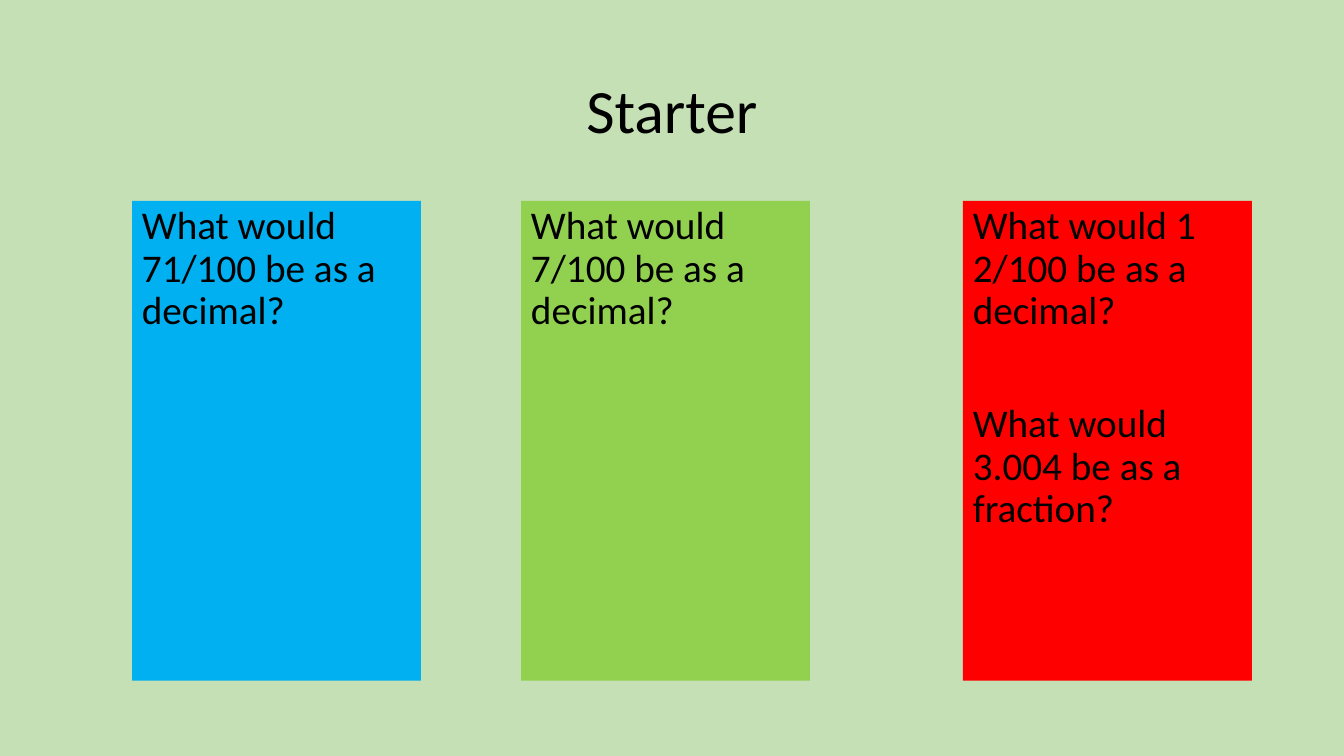
from dataclasses import dataclass

from pptx import Presentation
from pptx.dml.color import RGBColor
from pptx.enum.shapes import MSO_SHAPE
from pptx.enum.text import MSO_ANCHOR, PP_ALIGN
from pptx.util import Pt


@dataclass(frozen=True)
class Theme:
    font: str = "Calibri"
    title_size: float = 44
    body_size: float = 28
    line_spacing: float = 0.9
    text: str = "000000"
    background: str = "C5E0B4"
    blue: str = "00B0F0"
    green: str = "92D050"
    red: str = "FF0000"


def write_text(paragraph, text, *, font, size, color, line_spacing,
               align=PP_ALIGN.LEFT, space_before=0):
    paragraph.alignment = align
    paragraph.line_spacing = line_spacing
    paragraph.space_before = Pt(space_before)
    run = paragraph.add_run()
    run.text = text
    run.font.name = font
    run.font.size = Pt(size)
    run.font.color.rgb = RGBColor.from_string(color)


class SlideBuilder:
    def __init__(self, slide, theme):
        self.slide = slide
        self.theme = theme
        self.text_style = dict(font=theme.font, color=theme.text,
                               line_spacing=theme.line_spacing)

    def background(self):
        fill = self.slide.background.fill
        fill.solid()
        fill.fore_color.rgb = RGBColor.from_string(self.theme.background)

    def title(self, text, left, top, width, height):
        shape = self.slide.shapes.title
        shape.left, shape.top = Pt(left), Pt(top)
        shape.width, shape.height = Pt(width), Pt(height)
        shape.text_frame.vertical_anchor = MSO_ANCHOR.MIDDLE
        write_text(shape.text_frame.paragraphs[0], text, size=self.theme.title_size,
                   align=PP_ALIGN.CENTER, **self.text_style)

    def card(self, questions, color, left, top, width, height,
             first_space=10, question_gap=50.76):
        shape = self.slide.shapes.add_shape(
            MSO_SHAPE.RECTANGLE, Pt(left), Pt(top), Pt(width), Pt(height))
        shape.shadow.inherit = False
        shape.fill.solid()
        shape.fill.fore_color.rgb = RGBColor.from_string(color)
        shape.line.fill.background()
        frame = shape.text_frame
        frame.word_wrap = True
        frame.vertical_anchor = MSO_ANCHOR.TOP
        for index, question in enumerate(questions):
            paragraph = frame.add_paragraph() if index else frame.paragraphs[0]
            write_text(paragraph, question, size=self.theme.body_size,
                       space_before=question_gap if index else first_space,
                       **self.text_style)


def main():
    theme = Theme()
    presentation = Presentation()
    presentation.slide_width, presentation.slide_height = Pt(960), Pt(540)
    title_only = presentation.slide_layouts[5]
    builder = SlideBuilder(presentation.slides.add_slide(title_only), theme)

    # Background and title
    builder.background()
    builder.title("Starter", left=66, top=28.75, width=828, height=104.4)

    # Question cards
    cards = [
        (94.3, theme.blue, ["What would 71/100 be as a decimal?"]),
        (372.2, theme.green, ["What would 7/100 be as a decimal?"]),
        (687.8, theme.red, ["What would 1 2/100 be as a decimal?",
                            "What would 3.004 be as a fraction?"]),
    ]
    for left, color, questions in cards:
        builder.card(questions, color, left, top=143.5, width=206.4, height=342.7)

    presentation.save("out.pptx")


if __name__ == "__main__":
    main()
